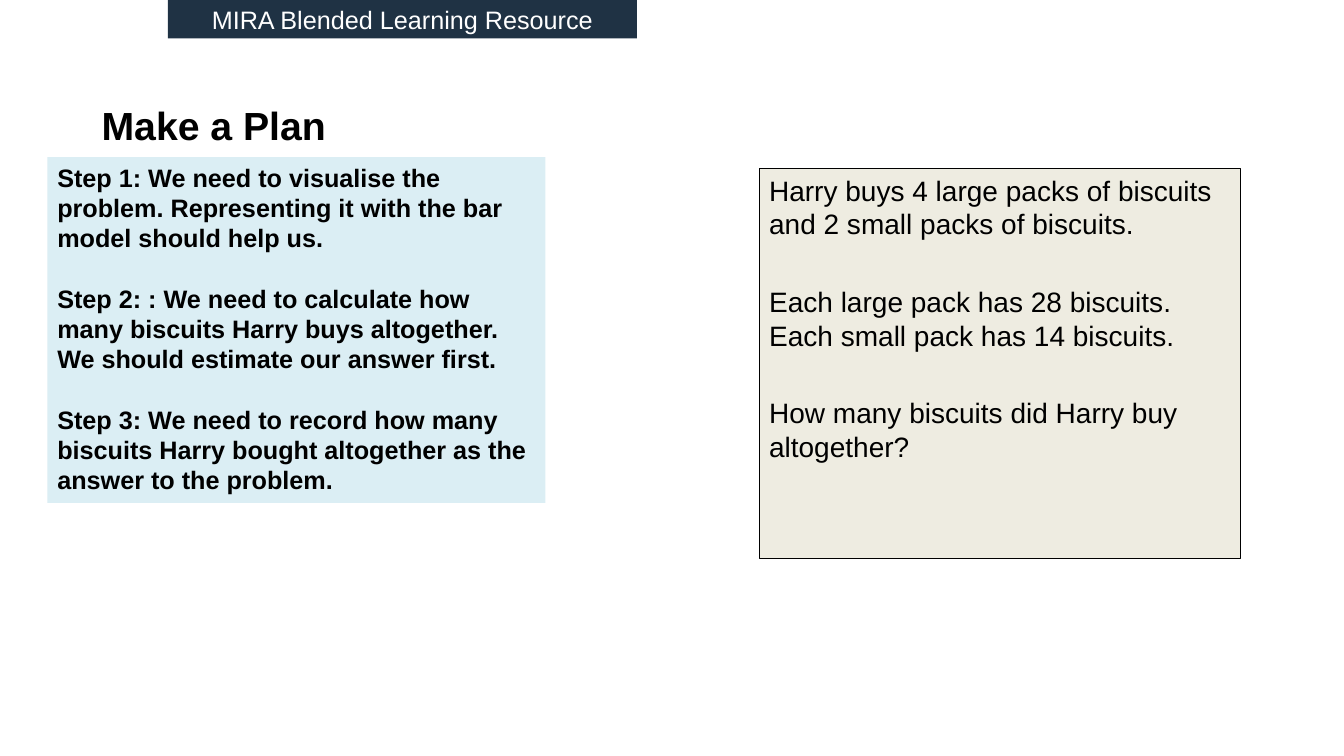
from pptx import Presentation
from pptx.dml.color import RGBColor
from pptx.enum.shapes import MSO_SHAPE
from pptx.enum.text import MSO_ANCHOR, PP_ALIGN
from pptx.util import Inches, Pt

RECTANGLE = MSO_SHAPE.RECTANGLE
TOP, MIDDLE = MSO_ANCHOR.TOP, MSO_ANCHOR.MIDDLE
LEFT, CENTER = PP_ALIGN.LEFT, PP_ALIGN.CENTER

WIDTH, HEIGHT = 13.33, 7.5
FONT = "Arial"
BLACK, WHITE = "000000", "FFFFFF"
NAVY, PALE_BLUE, CREAM = "1F3244", "DBEEF4", "EEECE1"

STEPS = [
    "Step 1: We need to visualise the problem. Representing it with the bar model should help us.",
    "Step 2: : We need to calculate how many biscuits Harry buys altogether. "
    "We should estimate our answer first.",
    "Step 3: We need to record how many biscuits Harry bought altogether as the answer to the problem.",
]
PROBLEM = [
    "Harry buys 4 large packs of biscuits and 2 small packs of biscuits.",
    "Each large pack has 28 biscuits. Each small pack has 14 biscuits.",
    "How many biscuits did Harry buy altogether?",
]


def color(value):
    return RGBColor.from_string(value)


def write_text(shape, paragraphs, size=18, ink=BLACK, bold=False,
               align=LEFT, anchor=TOP, gap=0):
    frame = shape.text_frame
    frame.word_wrap = True
    frame.vertical_anchor = anchor
    for index, text in enumerate(paragraphs):
        paragraph = frame.add_paragraph() if index else frame.paragraphs[0]
        paragraph.text = text
        paragraph.alignment = align
        paragraph.space_before = Pt(gap if index else 0)
        paragraph.font.name = FONT
        paragraph.font.size = Pt(size)
        paragraph.font.bold = bold
        paragraph.font.color.rgb = color(ink)


def add_title(slide, box, text):
    title = slide.shapes.add_textbox(*map(Inches, box))
    write_text(title, [text], size=28, bold=True, anchor=MIDDLE)


def add_panel(slide, box, paragraphs, fill, outline=None, **text_format):
    panel = slide.shapes.add_shape(RECTANGLE, *map(Inches, box))
    panel.shadow.inherit = False
    panel.fill.solid()
    panel.fill.fore_color.rgb = color(fill)
    if outline:
        panel.line.color.rgb = color(outline)
        panel.line.width = Pt(0.75)
    else:
        panel.line.fill.background()
    write_text(panel, paragraphs, **text_format)


def main():
    presentation = Presentation()
    presentation.slide_width = Inches(WIDTH)
    presentation.slide_height = Inches(HEIGHT)
    slide = presentation.slides.add_slide(presentation.slide_layouts[6])

    add_title(slide, (0.91, 0.92, 9, 0.64), "Make a Plan")
    add_panel(slide, (0.47, 1.56, 4.94, 3.43), STEPS, PALE_BLUE,
              bold=True, gap=21.6)
    add_panel(slide, (WIDTH / 8, 0, 4.65, 0.38), ["MIRA Blended Learning Resource"],
              NAVY, ink=WHITE, align=CENTER, anchor=MIDDLE)
    add_panel(slide, (7.53, 1.67, 4.77, 3.87), PROBLEM, CREAM,
              outline=BLACK, size=20, gap=31.4)

    presentation.save("out.pptx")


if __name__ == "__main__":
    main()
